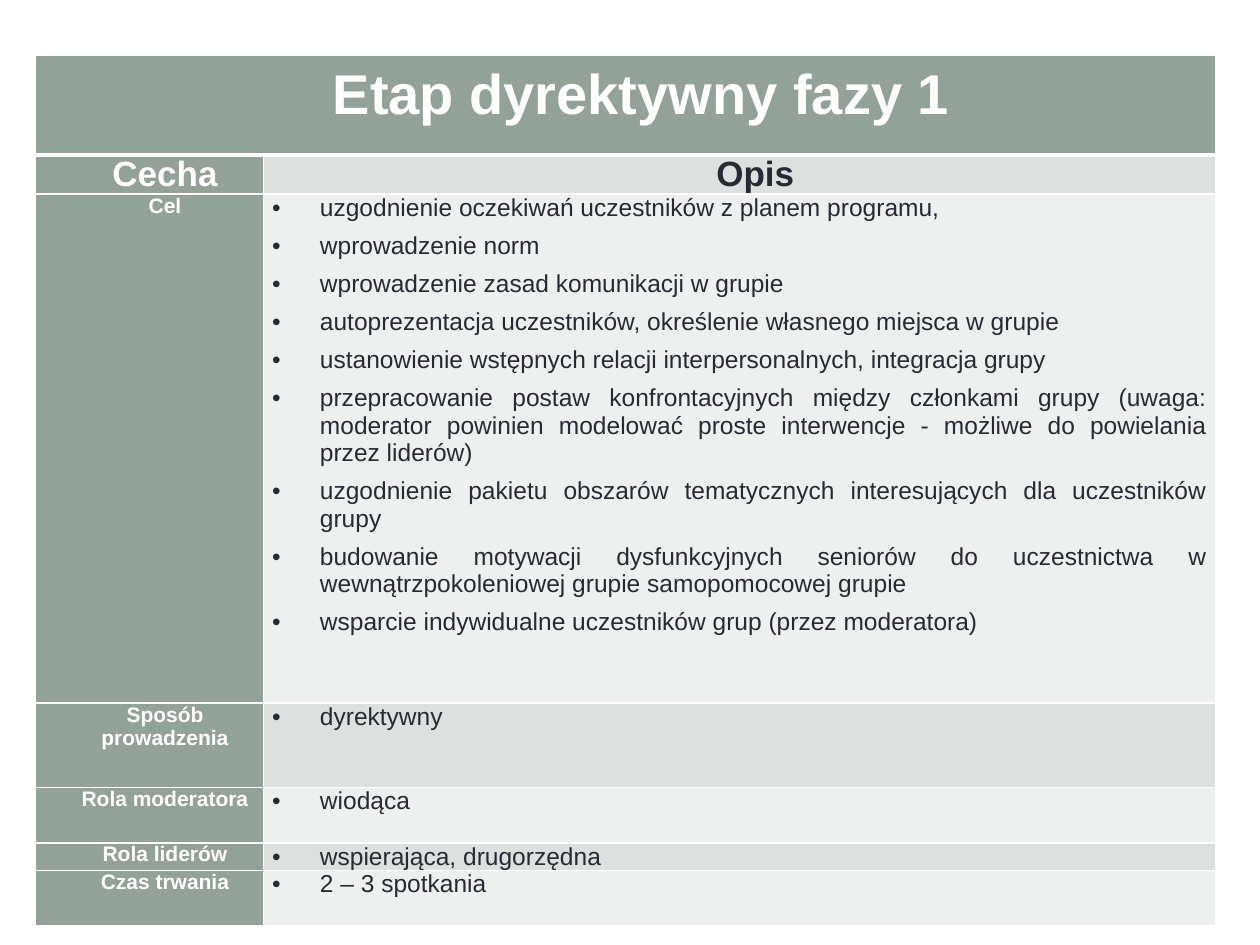
"""Build a slide with a table describing the directive stage of phase 1."""
from dataclasses import dataclass

from lxml.etree import SubElement
from pptx import Presentation
from pptx.dml.color import RGBColor
from pptx.enum.text import MSO_ANCHOR as Anchor, PP_ALIGN as Align
from pptx.oxml.ns import qn
from pptx.util import Inches, Pt

COLORS = {"white": "FFFFFF", "sage": "93A299", "dark": "292934",
          "band": "DCE0DE", "pale": "EEF0EF"}
COLUMN_WIDTHS = (1.81, 7.56)
TITLE_HEIGHT = 0.79


@dataclass(frozen=True)
class TextStyle:
    size: int
    color: str
    bold: bool = True
    bulleted: bool = False


@dataclass(frozen=True)
class StageRow:
    height: float
    feature: str
    description: tuple[str, ...]


TITLE = TextStyle(32, "white")
FEATURE_HEADING = TextStyle(20, "white")
DESCRIPTION_HEADING = TextStyle(20, "dark")
FEATURE = TextStyle(12, "white")
DESCRIPTION = TextStyle(14, "dark", bold=False, bulleted=True)

HEADING_ROW = StageRow(0.3, "Cecha", ("Opis",))
STAGE_ROWS = (
    StageRow(4.04, "Cel", (
        "uzgodnienie oczekiwań uczestników z planem programu,",
        "wprowadzenie norm",
        "wprowadzenie zasad komunikacji w grupie",
        "autoprezentacja uczestników, określenie własnego miejsca w grupie",
        "ustanowienie wstępnych relacji interpersonalnych, integracja grupy",
        "przepracowanie postaw konfrontacyjnych między członkami grupy (uwaga: "
        "moderator powinien modelować proste interwencje - możliwe do powielania "
        "przez liderów)",
        "uzgodnienie pakietu obszarów tematycznych interesujących dla uczestników "
        "grupy",
        "budowanie motywacji dysfunkcyjnych seniorów do uczestnictwa w "
        "wewnątrzpokoleniowej grupie samopomocowej grupie",
        "wsparcie indywidualne uczestników grup (przez moderatora)",
    )),
    StageRow(0.67, "Sposób prowadzenia", ("dyrektywny",)),
    StageRow(0.44, "Rola moderatora", ("wiodąca",)),
    StageRow(0.22, "Rola liderów", ("wspierająca, drugorzędna",)),
    StageRow(0.44, "Czas trwania", ("2 – 3 spotkania",)),
)


def rgb(name: str) -> RGBColor:
    """Return the named colour."""
    return RGBColor.from_string(COLORS[name])


def style_cell(cell, fill: str, bottom: int = 1, top: int = 1) -> None:
    """Set the borders, fill and margins of a cell."""
    properties = cell._tc.get_or_add_tcPr()
    for side, width in {"L": 1, "R": 1, "T": top, "B": bottom}.items():
        line = SubElement(properties, qn(f"a:ln{side}"), w=str(Pt(width)))
        solid = SubElement(line, qn("a:solidFill"))
        SubElement(solid, qn("a:srgbClr"), val=COLORS["white"])
    cell.fill.solid()
    cell.fill.fore_color.rgb = rgb(fill)
    margins = {"margin_left": 0.07, "margin_right": 0.07,
               "margin_top": 0, "margin_bottom": 0}
    for name, value in margins.items():
        setattr(cell, name, Inches(value))


def write_cell(cell, lines: tuple[str, ...], style: TextStyle) -> None:
    """Write one paragraph for each line of text."""
    frame = cell.text_frame
    margin, indent = (0.38, -0.38) if style.bulleted else (0.25, 0)
    for index, text in enumerate(lines):
        para = frame.add_paragraph() if index else frame.paragraphs[0]
        properties = para._p.get_or_add_pPr()
        properties.set("marL", str(Inches(margin)))
        properties.set("indent", str(Inches(indent)))
        if style.bulleted:
            SubElement(properties, qn("a:buFont"), typeface="Arial")
            SubElement(properties, qn("a:buChar"), char="•")
        para.alignment = Align.JUSTIFY if style.bulleted else Align.CENTER
        para.space_before = Pt(6 if index else 0)
        span = para.add_run()
        span.text = text
        formats = {"name": "Arial", "size": Pt(style.size), "bold": style.bold}
        for name, value in formats.items():
            setattr(span.font, name, value)
        span.font.color.rgb = rgb(style.color)


def add_title_row(table) -> None:
    """Fill the merged title row."""
    title_cell, covered_cell = table.cell(0, 0), table.cell(0, 1)
    title_cell.merge(covered_cell)
    for cell in (title_cell, covered_cell):
        style_cell(cell, "sage", bottom=3)
    title_cell.vertical_anchor = Anchor.MIDDLE
    title_cell.margin_bottom = Inches(0.16)
    write_cell(title_cell, ("Etap dyrektywny fazy 1",), TITLE)


def add_stage_row(table, index: int, row: StageRow) -> None:
    """Fill one row with a feature and its description."""
    heading = row is HEADING_ROW
    feature_cell, description_cell = table.cell(index, 0), table.cell(index, 1)
    top = 3 if heading else 1
    style_cell(feature_cell, "sage", top=top)
    style_cell(description_cell, "band" if index % 2 else "pale", top=top)
    write_cell(feature_cell, (row.feature,), FEATURE_HEADING if heading else FEATURE)
    write_cell(description_cell, row.description,
               DESCRIPTION_HEADING if heading else DESCRIPTION)


def main() -> None:
    """Build and save the deck."""
    deck = Presentation()
    deck.slide_width, deck.slide_height = Inches(10), Inches(7.5)
    page = deck.slides.add_slide(deck.slide_layouts[6])
    rows = (HEADING_ROW, *STAGE_ROWS)
    heights = (TITLE_HEIGHT, *(row.height for row in rows))
    table = page.shapes.add_table(
        len(heights), len(COLUMN_WIDTHS), Inches(0.28), Inches(0.44),
        Inches(sum(COLUMN_WIDTHS)), Inches(sum(heights))).table
    table.first_row = table.horz_banding = False
    for column, width in zip(table.columns, COLUMN_WIDTHS):
        column.width = Inches(width)
    for table_row, height in zip(table.rows, heights):
        table_row.height = Inches(height)
    add_title_row(table)
    for index, row in enumerate(rows, start=1):
        add_stage_row(table, index, row)
    deck.save("out.pptx")


if __name__ == "__main__":
    main()
